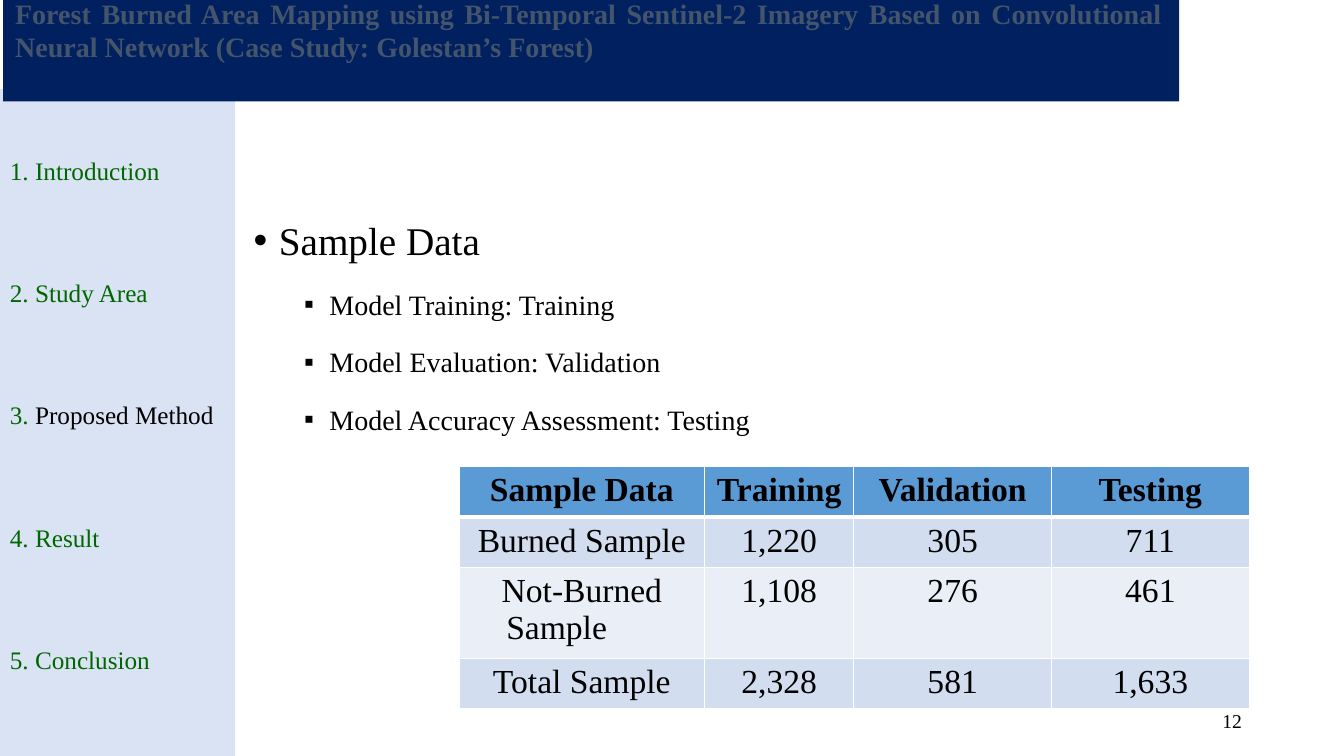
from lxml.etree import SubElement
from pptx import Presentation
from pptx.dml.color import RGBColor
from pptx.enum.shapes import MSO_SHAPE as Shape
from pptx.enum.text import MSO_ANCHOR as Anchor, PP_ALIGN as Align
from pptx.oxml.ns import qn
from pptx.util import Pt

FONT = "Times New Roman"
BLACK = RGBColor(0x00, 0x00, 0x00)
WHITE = RGBColor(0xFF, 0xFF, 0xFF)
GREEN = RGBColor(0x00, 0x66, 0x00)
SLATE = RGBColor(0x44, 0x54, 0x6A)
NAVY = RGBColor(0x00, 0x20, 0x60)
PALE_BLUE = RGBColor(0xDA, 0xE3, 0xF3)
HEADER_BLUE = RGBColor(0x5B, 0x9B, 0xD5)
BAND_DARK = RGBColor(0xD2, 0xDE, 0xEF)
BAND_LIGHT = RGBColor(0xEA, 0xEF, 0xF7)

TITLE = ("Forest Burned Area Mapping using Bi-Temporal Sentinel-2 Imagery Based on "
         "Convolutional Neural Network (Case Study: Golestan’s Forest)")
SECTIONS = ["Introduction", "Study Area", "Proposed Method", "Result", "Conclusion"]
CURRENT_SECTION = "Proposed Method"
DATA_USES = ["Model Training: Training", "Model Evaluation: Validation",
             "Model Accuracy Assessment: Testing"]
SAMPLES = [
    ["Sample Data", "Training", "Validation", "Testing"],
    ["Burned Sample", "1,220", "305", "711"],
    ["Not-Burned Sample\t", "1,108", "276", "461"],
    ["Total Sample", "2,328", "581", "1,633"],
]
COLUMN_WIDTHS = [175.4, 106.6, 141.2, 141.2]
ROW_HEIGHT = 29.5


def add_span(para, text, size, color=BLACK, bold=False):
    span = para.add_run()
    span.text = text
    span.font.name = FONT
    span.font.size = Pt(size)
    span.font.bold = bold
    span.font.color.rgb = color


def format_para(para, align=Align.LEFT, line=1.0, before=0, after=0):
    para.alignment = align
    para.line_spacing = line
    para.space_before = Pt(before)
    para.space_after = Pt(after)


def next_para(frame):
    """Return the empty first paragraph, or a new one after the text."""
    first = frame.paragraphs[0]
    return frame.add_paragraph() if first.runs else first


def add_bullet(para, char, margin, hang=18):
    props = para._p.get_or_add_pPr()
    props.set("marL", str(Pt(margin)))
    props.set("indent", str(-Pt(hang)))
    SubElement(props, qn("a:buFont"), typeface="Arial")
    SubElement(props, qn("a:buChar"), char=char)


def add_panel(page, left, top, width, height, color):
    panel = page.shapes.add_shape(Shape.RECTANGLE, Pt(left), Pt(top), Pt(width), Pt(height))
    panel.shadow.inherit = False
    panel.fill.solid()
    panel.fill.fore_color.rgb = color
    panel.line.fill.background()
    return panel


def add_text_box(page, left, top, width, height, anchor=Anchor.TOP):
    frame = page.shapes.add_textbox(Pt(left), Pt(top), Pt(width), Pt(height)).text_frame
    frame.word_wrap = True
    frame.vertical_anchor = anchor
    return frame


def add_sidebar(page):
    frame = add_panel(page, 0, 63.4, 168, 476.6, PALE_BLUE).text_frame
    frame.vertical_anchor = Anchor.TOP
    frame.margin_top = Pt(47.5)
    for number, section in enumerate(SECTIONS, 1):
        para = next_para(frame)
        format_para(para, after=65.7)
        add_span(para, f"{number}. ", 18, GREEN)
        add_span(para, section, 18, BLACK if section == CURRENT_SECTION else GREEN)


def set_title(page):
    title = page.shapes.title
    title.left, title.top, title.width, title.height = Pt(3.6), Pt(-23.8), Pt(833.8), Pt(90)
    # Moving the title to the end draws it above the banner.
    page.shapes._spTree.append(title._element)
    frame = title.text_frame
    frame.word_wrap = True
    frame.vertical_anchor = Anchor.MIDDLE
    para = frame.paragraphs[0]
    format_para(para, Align.JUSTIFY)
    add_span(para, TITLE, 20, SLATE, bold=True)


def add_data_uses(page):
    frame = add_text_box(page, 174.2, 80.6, 540, 426)
    heading = next_para(frame)
    format_para(heading, line=3.1, before=10)
    add_bullet(heading, "•", 18)
    add_span(heading, "Sample Data", 28)
    for use in DATA_USES:
        para = next_para(frame)
        para.level = 1
        format_para(para, line=1.5, before=5)
        add_bullet(para, "▪", 54)
        add_span(para, use, 20)


def set_cell_border(cell, side, width):
    line = SubElement(cell._tc.get_or_add_tcPr(), qn(f"a:{side}"), w=str(Pt(width)))
    fill = SubElement(line, qn("a:solidFill"))
    SubElement(fill, qn("a:srgbClr"), val=str(WHITE))


def fill_cell(cell, text, row):
    header = row == 0
    for side in ("lnL", "lnR", "lnT", "lnB"):
        thick = (side == "lnB" and header) or (side == "lnT" and row == 1)
        set_cell_border(cell, side, 3 if thick else 1)
    cell.fill.solid()
    cell.fill.fore_color.rgb = HEADER_BLUE if header else BAND_DARK if row % 2 else BAND_LIGHT
    para = cell.text_frame.paragraphs[0]
    format_para(para, Align.CENTER)
    add_span(para, text, 24, bold=header)


def add_sample_table(page):
    table = page.shapes.add_table(
        len(SAMPLES), len(COLUMN_WIDTHS), Pt(327.9), Pt(333.4),
        Pt(sum(COLUMN_WIDTHS)), Pt(ROW_HEIGHT * len(SAMPLES))).table
    for column, width in zip(table.columns, COLUMN_WIDTHS):
        column.width = Pt(width)
    for row, texts in enumerate(SAMPLES):
        for column, text in enumerate(texts):
            fill_cell(table.cell(row, column), text, row)


def add_page_number(page):
    para = next_para(add_text_box(page, 678.2, 500.4, 216, 28.8, Anchor.MIDDLE))
    format_para(para, Align.RIGHT)
    add_span(para, "12", 14)


def main():
    deck = Presentation()
    deck.slide_width, deck.slide_height = Pt(960), Pt(540)
    page = deck.slides.add_slide(deck.slide_layouts[5])
    add_sidebar(page)
    add_panel(page, 2.2, -11.5, 840, 84, NAVY)
    set_title(page)
    add_data_uses(page)
    add_page_number(page)
    add_sample_table(page)
    deck.save("out.pptx")


if __name__ == "__main__":
    main()
